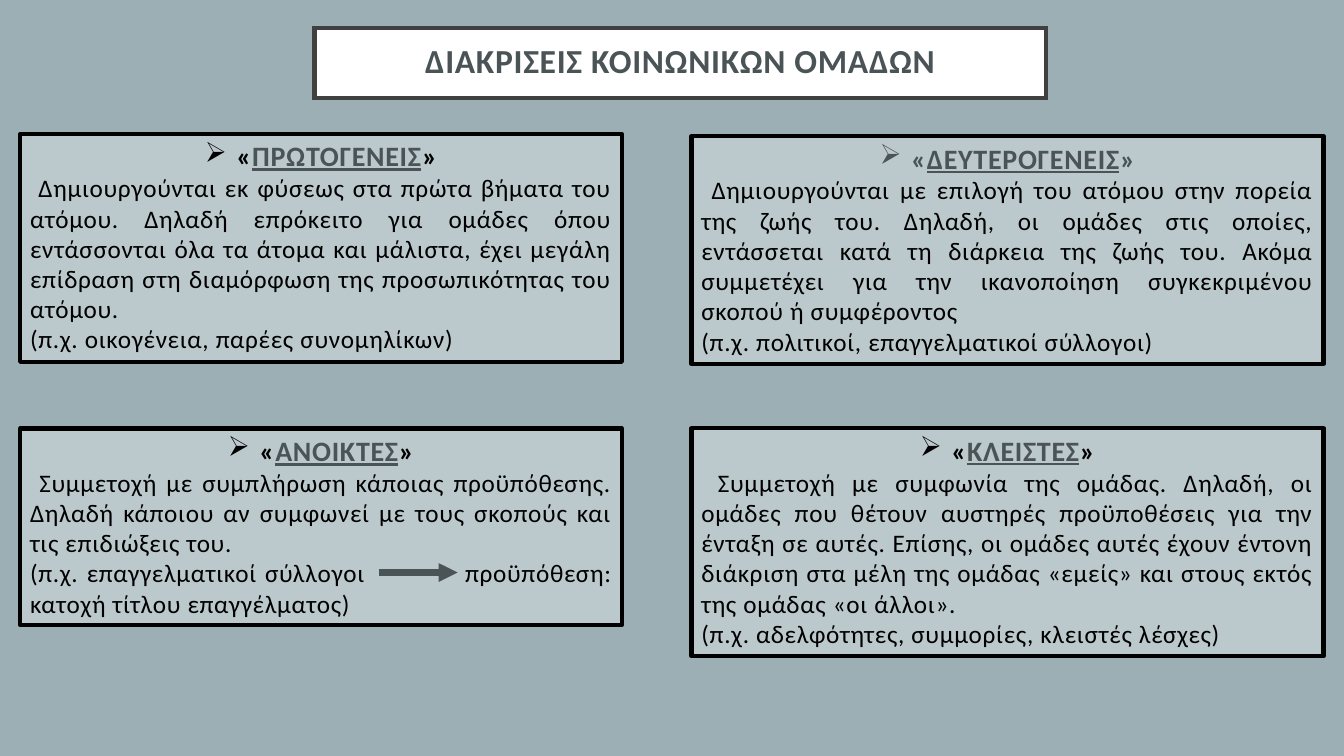
from lxml.etree import SubElement
from pptx import Presentation
from pptx.dml.color import RGBColor
from pptx.enum.shapes import MSO_CONNECTOR as Connector, MSO_SHAPE as Shape
from pptx.enum.text import MSO_ANCHOR as Anchor, MSO_AUTO_SIZE as AutoSize, PP_ALIGN as Align
from pptx.oxml.ns import qn
from pptx.util import Pt

BACKGROUND = RGBColor(0x9B, 0xAF, 0xB5)
WHITE = RGBColor(0xFF, 0xFF, 0xFF)
BLACK = RGBColor(0, 0, 0)
FRAME = RGBColor(0x40, 0x40, 0x40)
SLATE = RGBColor(0x4A, 0x53, 0x56)
PANEL_TOP = RGBColor(0xBB, 0xC8, 0xCC)
PANEL_BOTTOM = RGBColor(0xB8, 0xC6, 0xCB)

LEFT, RIGHT = (14.4, 429.84), (493.92, 451.44)
TALL, SHORT = 162.72, 140.4
LOWER_TOP = 306
ARROW_GAP_END = 308

GROUPS = [
    (LEFT, 95.76, TALL, "ΠΡΩΤΟΓΕΝΕΙΣ", BLACK,
     " Δημιουργούνται εκ φύσεως στα πρώτα βήματα του ατόμου. Δηλαδή επρόκειτο για ομάδες "
     "όπου εντάσσονται όλα τα άτομα και μάλιστα, έχει μεγάλη επίδραση στη διαμόρφωση της "
     "προσωπικότητας του ατόμου.",
     "(π.χ. οικογένεια, παρέες συνομηλίκων)"),
    (RIGHT, 97.2, TALL, "ΔΕΥΤΕΡΟΓΕΝΕΙΣ", SLATE,
     " Δημιουργούνται με επιλογή του ατόμου στην πορεία της ζωής του. Δηλαδή, οι ομάδες στις "
     "οποίες, εντάσσεται κατά τη διάρκεια της ζωής του. Ακόμα συμμετέχει για την ικανοποίηση "
     "συγκεκριμένου σκοπού ή συμφέροντος",
     "(π.χ. πολιτικοί, επαγγελματικοί σύλλογοι)"),
    (LEFT, LOWER_TOP, SHORT, "ΑΝΟΙΚΤΕΣ", BLACK,
     " Συμμετοχή με συμπλήρωση κάποιας προϋπόθεσης. Δηλαδή κάποιου αν συμφωνεί με τους "
     "σκοπούς και τις επιδιώξεις του.",
     "(π.χ. επαγγελματικοί σύλλογοι\tπροϋπόθεση: κατοχή τίτλου επαγγέλματος)"),
    (RIGHT, LOWER_TOP, TALL, "ΚΛΕΙΣΤΕΣ", BLACK,
     " Συμμετοχή με συμφωνία της ομάδας. Δηλαδή, οι ομάδες που θέτουν αυστηρές προϋποθέσεις "
     "για την ένταξη σε αυτές. Επίσης, οι ομάδες αυτές έχουν έντονη διάκριση στα μέλη της "
     "ομάδας «εμείς» και στους εκτός της ομάδας «οι άλλοι».",
     "(π.χ. αδελφότητες, συμμορίες, κλειστές λέσχες)"),
]


class SlideBuilder:
    """Holds the style and the current slide, and draws each kind of element."""

    font = {"name": "Calibri", "size": Pt(18), "bold": False, "underline": False}
    heading = {"size": Pt(20), "bold": True}

    def __init__(self, page):
        self.page = page
        page.background.fill.solid()
        page.background.fill.fore_color.rgb = BACKGROUND

    def apply(self, target, values):
        for name, value in values.items():
            setattr(target, name, value)

    def box(self, left, top, width, height, line_color, frame):
        box = self.page.shapes.add_shape(
            Shape.RECTANGLE, Pt(left), Pt(top), Pt(width), Pt(height))
        box.shadow.inherit = False
        box.line.color.rgb = line_color
        box.line.width = Pt(3)
        self.apply(box.text_frame, {"word_wrap": True, **frame})
        return box

    def span(self, para, text, color, **values):
        span = para.add_run()
        span.text = text
        self.apply(span.font, {**self.font, **values})
        span.font.color.rgb = color
        span.font._element.set("spc", "50")

    def title(self, text, left, top, width, height):
        side, edge = Pt(21.6), Pt(14.4)
        box = self.box(left, top, width, height, FRAME, {
            "vertical_anchor": Anchor.MIDDLE, "margin_left": side, "margin_right": side,
            "margin_top": edge, "margin_bottom": edge})
        box.fill.solid()
        box.fill.fore_color.rgb = WHITE
        SubElement(box.line._get_or_add_ln(), qn("a:miter"), lim="800000")
        para = box.text_frame.paragraphs[0]
        self.apply(para, {"alignment": Align.CENTER, "line_spacing": 0.9})
        self.span(para, text, SLATE, size=Pt(24), bold=True)

    def panel(self, column, top, height, name, quote_color, *body):
        left, width = column
        box = self.box(left, top, width, height, BLACK, {
            "vertical_anchor": Anchor.TOP, "auto_size": AutoSize.SHAPE_TO_FIT_TEXT})
        box.fill.gradient()
        box.fill.gradient_angle = 270
        for stop, color in zip(box.fill.gradient_stops, (PANEL_TOP, PANEL_BOTTOM)):
            stop.color.rgb = color
        para = box.text_frame.paragraphs[0]
        para.alignment = Align.CENTER
        self.bullet(para)
        self.span(para, "«", quote_color, **self.heading)
        self.span(para, name, SLATE, **{**self.heading, "underline": True})
        self.span(para, "»", quote_color, **self.heading)
        for text in body:
            para = box.text_frame.add_paragraph()
            para.alignment = Align.JUSTIFY
            if "\t" in text:
                self.tab_stop(para, ARROW_GAP_END)
            self.span(para, text, BLACK)

    def bullet(self, para):
        props = para._p.get_or_add_pPr()
        indent = Pt(22.5)
        props.set("marL", str(indent))
        props.set("indent", str(-indent))
        SubElement(props, qn("a:buChar"), char="➢")

    def tab_stop(self, para, position):
        tabs = SubElement(para._p.get_or_add_pPr(), qn("a:tabLst"))
        SubElement(tabs, qn("a:tab"), pos=str(Pt(position)), algn="l")

    def arrow(self, start, end, y):
        arrow = self.page.shapes.add_connector(
            Connector.STRAIGHT, Pt(start), Pt(y), Pt(end), Pt(y))
        arrow.line.color.rgb = SLATE
        arrow.line.width = Pt(4.5)
        SubElement(arrow.line._get_or_add_ln(), qn("a:tailEnd"), type="triangle")
        SubElement(arrow._element.spPr, qn("a:effectLst"))


def main():
    deck = Presentation()
    deck.slide_width, deck.slide_height = Pt(960), Pt(540)
    builder = SlideBuilder(deck.slides.add_slide(deck.slide_layouts[6]))
    builder.title("ΔΙΑΚΡΙΣΕΙΣ ΚΟΙΝΩΝΙΚΩΝ ΟΜΑΔΩΝ", 224.64, 20.16, 522.72, 49.68)
    for group in GROUPS:
        builder.panel(*group)
    builder.arrow(270.72, 326.88, 408.96)
    deck.save("out.pptx")


if __name__ == "__main__":
    main()
